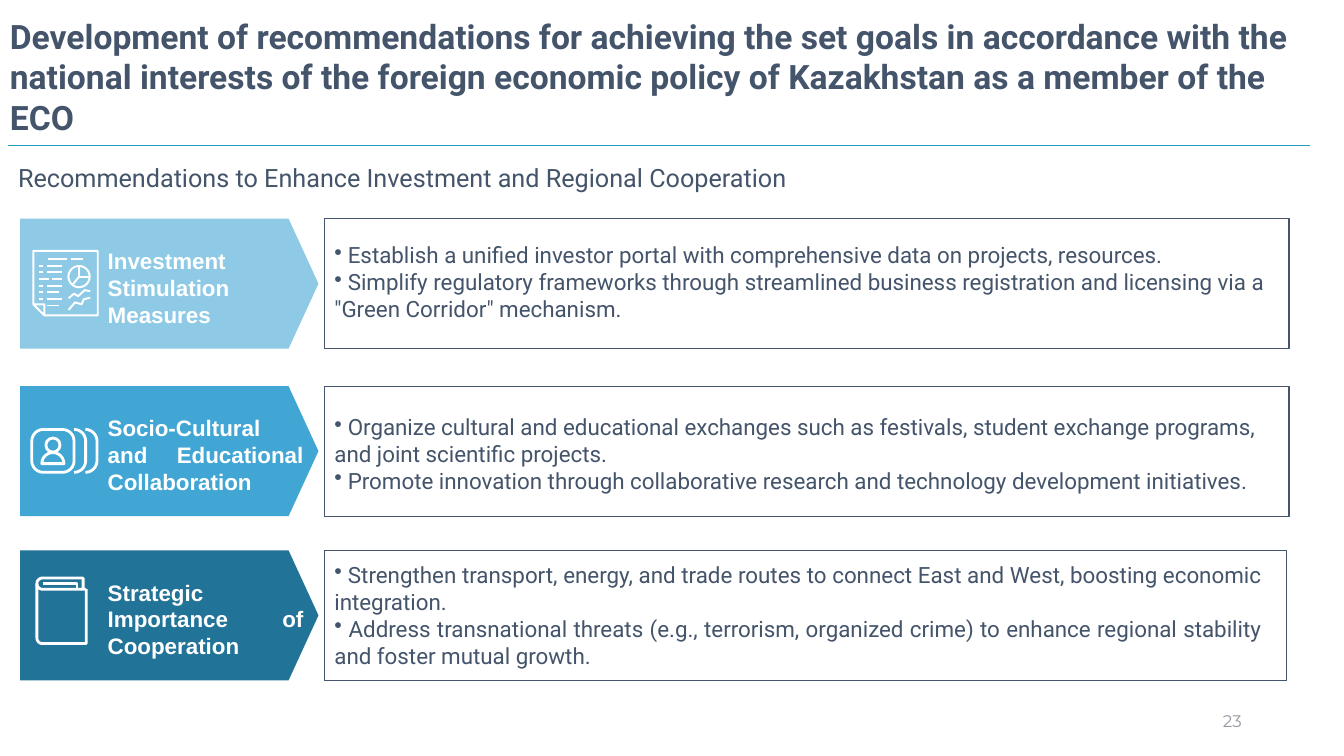
from math import cos, radians, sin

from lxml import etree
from pptx import Presentation
from pptx.dml.color import RGBColor
from pptx.enum.shapes import MSO_CONNECTOR, MSO_SHAPE
from pptx.enum.text import MSO_ANCHOR, PP_ALIGN
from pptx.oxml.ns import qn
from pptx.util import Pt

RECTANGLE, PENTAGON = MSO_SHAPE.RECTANGLE, MSO_SHAPE.PENTAGON
OVAL, ROUNDED = MSO_SHAPE.OVAL, MSO_SHAPE.ROUNDED_RECTANGLE
TOP, MIDDLE = MSO_ANCHOR.TOP, MSO_ANCHOR.MIDDLE
LEFT, RIGHT, JUSTIFY = PP_ALIGN.LEFT, PP_ALIGN.RIGHT, PP_ALIGN.JUSTIFY

COLORS = {"text": "44546A", "rule": "219EBC", "number": "9499A1", "white": "FFFFFF",
          "light": "8ECAE6", "medium": "42A6D5", "dark": "227398"}
PLATE_LEFT, PLATE_WIDTH, BOX_LEFT, ROW_HEIGHT = 14.4, 213.1, 231.8, 92.9


def color(name):
    return RGBColor.from_string(COLORS[name])


def add_run(paragraph, text, size, font, color_name, bold=False):
    run = paragraph.add_run()
    run.text = text
    run.font.size, run.font.name, run.font.bold = Pt(size), font, bold
    run.font.color.rgb = color(color_name)


def add_text(slide, frame, texts, size, color_name="text", font="Roboto", bold=False,
             align=LEFT, anchor=TOP, bullets=False):
    text_frame = slide.shapes.add_textbox(*map(Pt, frame)).text_frame
    text_frame.word_wrap = True
    text_frame.vertical_anchor = anchor
    for index, text in enumerate(texts):
        paragraph = text_frame.add_paragraph() if index else text_frame.paragraphs[0]
        paragraph.alignment = align
        if bullets:
            properties = paragraph._p.get_or_add_pPr()
            etree.SubElement(properties, qn("a:buChar")).set("char", "•")
        add_run(paragraph, text, size, font, color_name, bold)


def style(shape, fill=None, line=None, width=0.75):
    shape.shadow.inherit = False
    if fill:
        shape.fill.solid()
        shape.fill.fore_color.rgb = color(fill)
    else:
        shape.fill.background()
    if line:
        shape.line.color.rgb = color(line)
        shape.line.width = Pt(width)
    else:
        shape.line.fill.background()


def add_shape(slide, kind, frame, **look):
    shape = slide.shapes.add_shape(kind, *map(Pt, frame))
    style(shape, **look)
    return shape


def add_rule(slide, left, right, y):
    rule = slide.shapes.add_connector(MSO_CONNECTOR.STRAIGHT, Pt(left), Pt(y), Pt(right), Pt(y))
    rule.line.color.rgb = color("rule")
    rule.line.width = Pt(0.5)
    etree.SubElement(rule._element.spPr, qn("a:effectLst"))


def add_plate(slide, top, label, fill):
    plate = add_shape(slide, PENTAGON, (PLATE_LEFT, top, PLATE_WIDTH, ROW_HEIGHT), fill=fill)
    plate.adjustments[0] = 0.23
    text_frame = plate.text_frame
    text_frame.word_wrap = True
    text_frame.vertical_anchor = TOP
    text_frame.margin_left, text_frame.margin_top = Pt(62.6), Pt(20.2)
    text_frame.margin_right = text_frame.margin_bottom = 0
    text_frame.paragraphs[0].alignment = JUSTIFY
    add_run(text_frame.paragraphs[0], label, 16, "Arial", "white", True)


# Icon parts: coordinates are measured from the top left of the plate
def add_strokes(slide, top, lines, width):
    lines = [[(Pt(PLATE_LEFT + x), Pt(top + y)) for x, y in line] for line in lines]
    builder = slide.shapes.build_freeform(*lines[0][0])
    for index, line in enumerate(lines):
        if index:
            builder.move_to(*line[0])
        builder.add_line_segments(line[1:], close=False)
    style(builder.convert_to_shape(), line="white", width=width)


def add_outline(slide, top, kind, frame, width):
    x, y, *size = frame
    return add_shape(slide, kind, (PLATE_LEFT + x, top + y, *size), line="white", width=width)


def arc(x, y, radius, start, end):
    angles = [radians(start + (end - start) * step / 12) for step in range(13)]
    return [(x + radius * cos(angle), y + radius * sin(angle)) for angle in angles]


def draw_report(slide, top):
    page = [(9.4, 61.2), (9.4, 23), (55.4, 23), (55.4, 69.1), (17.3, 69.1), (9.4, 61.2),
            (17.3, 61.2), (17.3, 69.1)]
    short, long = (13.7, 16.6), (19.4, 30.2)
    text_rows = [[(20.2, 33.1), (36, 44.6)], [short, long], [short, long],
                 [(13.7, 20.9), (23, 30.2)], [short, long], [short, (19.4, 27.4)],
                 [short, long], [(19.4, 27.4)]]
    text_lines = [[(start, 28.8 + 4.75 * row), (end, 28.8 + 4.75 * row)]
                  for row, spans in enumerate(text_rows) for start, end in spans]
    trends = [[(34.6, 65.2), (39.2, 59.8), (43.9, 61.2), (45.4, 57.6), (50, 56.5)],
              [(34.6, 56.9), (38.5, 53.6), (41.4, 55.4), (46.1, 51.1), (50, 51.8)]]
    pie_cuts = [[(42.1, 33.8), (42.1, 41.4), (49.7, 41.4)], [(42.1, 41.4), (37.8, 46.8)]]
    add_strokes(slide, top, [page, *text_lines, *trends, *pie_cuts], 1.4)
    add_outline(slide, top, OVAL, (34.5, 33.8, 15.2, 15.2), 1.4)


def draw_contact_cards(slide, top):
    card = add_outline(slide, top, ROUNDED, (8.3, 31, 30.2, 30.6), 2)
    card.adjustments[0] = 0.27
    back_cards = [arc(x, 39.3, 8.3, -90, 0) + arc(x, 53.3, 8.3, 0, 90) for x in (38.5, 46.6)]
    shoulders = arc(23.4, 55.4, 7.9, 180, 360) + [(15.5, 55.4)]
    add_strokes(slide, top, [*back_cards, shoulders], 2)
    add_outline(slide, top, OVAL, (18.4, 37.1, 10.1, 10.1), 2)


def draw_book(slide, top):
    cover = ([(47.2, 27.8), (47.2, 66.6)] + arc(16, 62.6, 4, 90, 180)
             + arc(16, 23.8, 4, 180, 270) + [(45, 19.8), (45, 27.8)])
    pages = arc(16, 23.8, 4, 180, 90) + [(47.2, 27.8)]
    add_strokes(slide, top, [cover, pages, [(16, 23.6), (40.7, 23.6), (40.7, 27.8)]], 2)


# Per row: top, box width, label, fill, icon, text top, width and height, alignment, points
ROWS = [
    (156.2, 689, "Investment Stimulation Measures", "light", draw_report,
     (168.5, 681.8, 65.5), LEFT,
     [" Establish a unified investor portal with comprehensive data on projects, resources.",
      " Simplify regulatory frameworks through streamlined business registration and licensing "
      "via a \"Green Corridor\" mechanism."]),
    (275.8, 689, "Socio-Cultural and Educational Collaboration", "medium", draw_contact_cards,
     (281.5, 689, 85), LEFT,
     [" Organize cultural and educational exchanges such as festivals, student exchange "
      "programs, and joint scientific projects.",
      " Promote innovation through collaborative research and technology development "
      "initiatives."]),
    (393.1, 686.9, "Strategic Importance of Cooperation", "dark", draw_book,
     (396.7, 676.8, 85), JUSTIFY,
     [" Strengthen transport, energy, and trade routes to connect East and West, boosting "
      "economic integration.",
      " Address transnational threats (e.g., terrorism, organized crime) to enhance regional "
      "stability and foster mutual growth."]),
]


def main():
    presentation = Presentation()
    presentation.slide_width, presentation.slide_height = Pt(960), Pt(540)
    slide = presentation.slides.add_slide(presentation.slide_layouts[6])

    # Heading
    add_text(slide, (0, 7.9, 931, 94.3),
             ["Development of recommendations for achieving the set goals in accordance with the "
              "national interests of the foreign economic policy of Kazakhstan as a member of "
              "the ECO"], 24, bold=True)
    add_rule(slide, 5.8, 936, 103.7)
    add_text(slide, (5.8, 112.3, 718.6, 28.8),
             ["Recommendations to Enhance Investment and Regional Cooperation"], 18)

    # Recommendation rows
    for top, box_width, label, fill, draw_icon, text_place, align, points in ROWS:
        add_shape(slide, RECTANGLE, (BOX_LEFT, top, box_width, ROW_HEIGHT), line="text")
        add_plate(slide, top, label, fill)
        draw_icon(slide, top)
        text_top, text_width, text_height = text_place
        add_text(slide, (BOX_LEFT, text_top, text_width, text_height), points, 16,
                 align=align, anchor=MIDDLE, bullets=True)

    # Slide number
    add_text(slide, (678.2, 500.4, 216, 28.8), ["23"], 12, "number", "Montserrat",
             align=RIGHT, anchor=MIDDLE)
    presentation.save("out.pptx")


if __name__ == "__main__":
    main()
